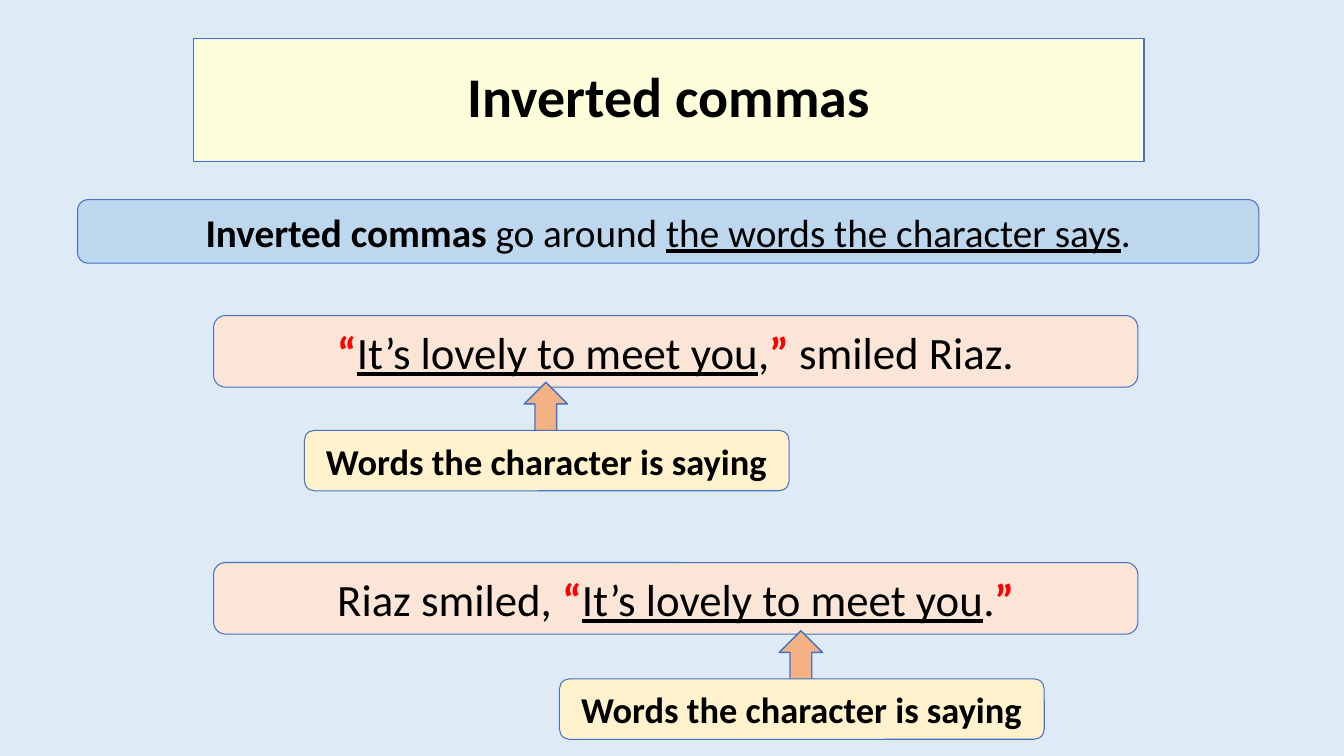
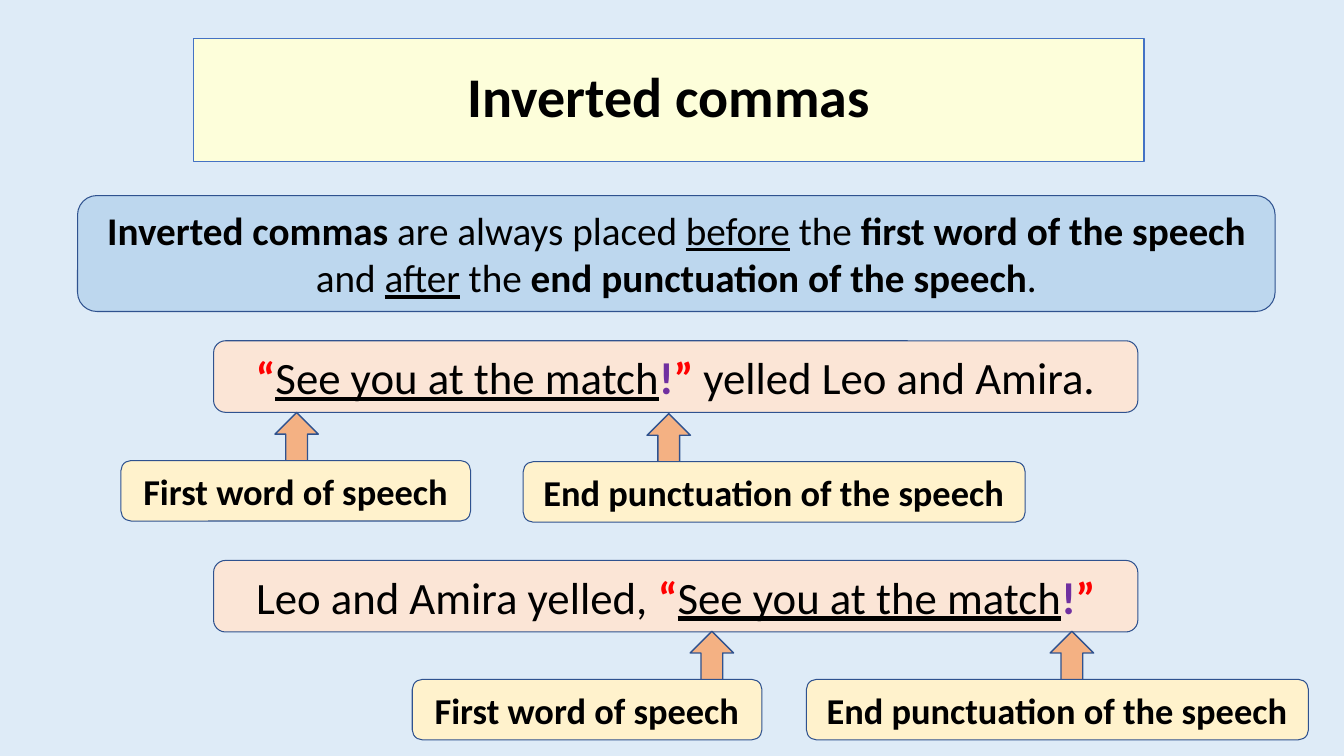
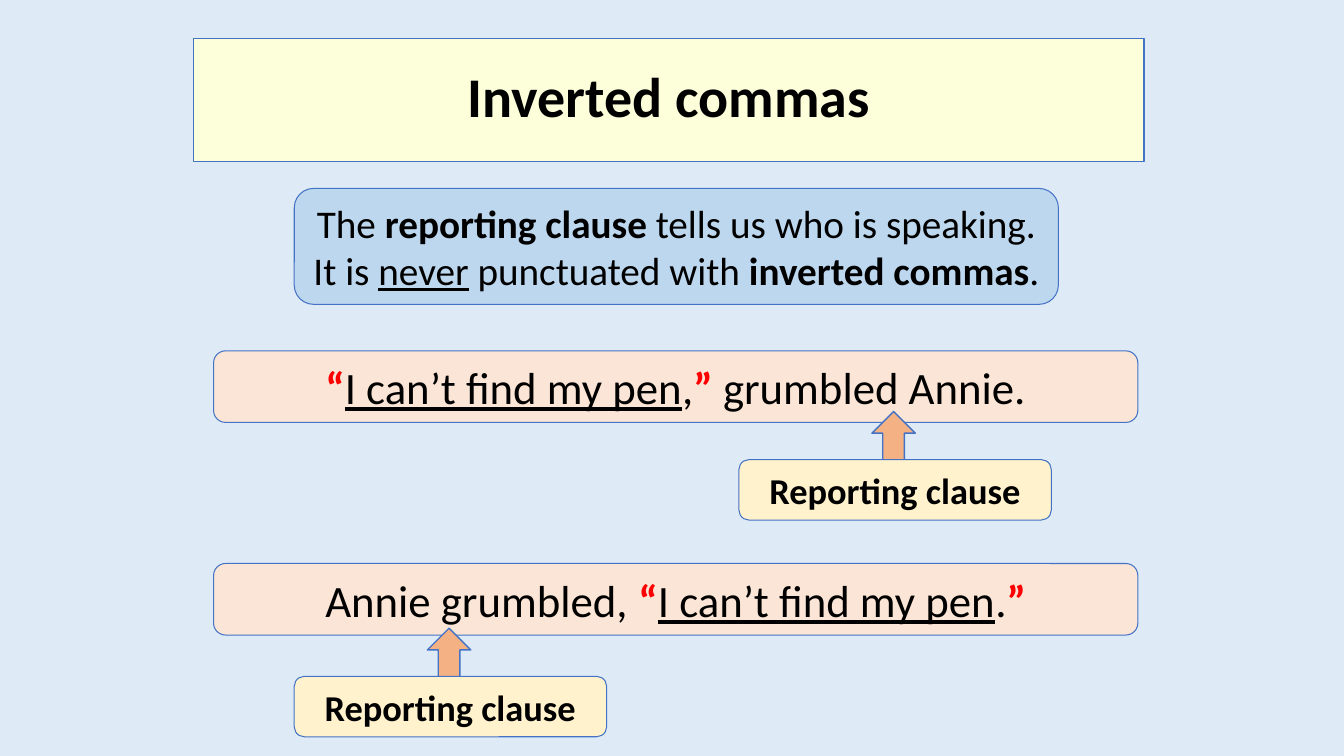
from pptx import Presentation
from pptx.dml.color import RGBColor
from pptx.enum.shapes import MSO_SHAPE
from pptx.enum.text import MSO_ANCHOR, PP_ALIGN
from pptx.util import Pt

RECT = MSO_SHAPE.RECTANGLE
ROUND = MSO_SHAPE.ROUNDED_RECTANGLE
ARROW = MSO_SHAPE.UP_ARROW
MIDDLE = MSO_ANCHOR.MIDDLE
CENTER = PP_ALIGN.CENTER

SKY = RGBColor(0xDE, 0xEB, 0xF7)
CREAM = RGBColor(0xFD, 0xFE, 0xDA)
BLUE = RGBColor(0xBD, 0xD7, 0xEE)
PEACH = RGBColor(0xFB, 0xE5, 0xD6)
ORANGE = RGBColor(0xF4, 0xB1, 0x83)
YELLOW = RGBColor(0xFF, 0xF2, 0xCC)
EDGE = RGBColor(0x44, 0x72, 0xC4)
NAVY = RGBColor(0x2F, 0x52, 0x8F)
BLACK = RGBColor(0, 0, 0)
RED = RGBColor(0xFF, 0, 0)
PURPLE = RGBColor(0x70, 0x30, 0xA0)

PLAIN = (BLACK, {})
BOLD = (BLACK, {"bold": True})
UNDER = (BLACK, {"underline": True})
MARK = (RED, {"bold": True})
STOP = (PURPLE, {"bold": True})

OPEN = ("“", MARK)
CLOSE = ("”", MARK)
MEET = ("It’s lovely to meet you", UNDER)
MATCH = ("See you at the match", UNDER)
PEN = ("I can’t find my pen", UNDER)
SHOUT = ("!", STOP)
COMMA = (",", PLAIN)
DOT = (".", PLAIN)

SAYING = ("Words the character is saying", 346.3)
FIRST = ("First word of speech", 249.8)
END = ("End punctuation of the speech", 358.6)
CLAUSE = ("Reporting clause", 223.2)

PAGES = [
    {
        "edge": EDGE,
        "rule": (55.4, 142.6, 843.8, 45.4),
        "words": [
            ("Inverted commas ", BOLD),
            ("go around ", PLAIN),
            ("the words the character says", UNDER),
            DOT,
        ],
        "lines": [
            (225.4, [OPEN, MEET, COMMA, CLOSE, (" smiled Riaz.", PLAIN)]),
            (401.8, [("Riaz smiled, ", PLAIN), OPEN, MEET, DOT, CLOSE]),
        ],
        "labels": [
            (SAYING, 217.4, 307.4, 374.4),
            (SAYING, 399.6, 484.9, 556.6),
        ],
    },
    {
        "edge": NAVY,
        "rule": (55.4, 139.7, 855.4, 82.8),
        "words": [
            ("Inverted commas ", BOLD),
            ("are always placed ", PLAIN),
            ("before", UNDER),
            (" the ", PLAIN),
            ("first word of the speech ", BOLD),
            ("and ", PLAIN),
            ("after", UNDER),
            (" the ", PLAIN),
            ("end punctuation of the speech", BOLD),
            DOT,
        ],
        "lines": [
            (243.4, [OPEN, MATCH, SHOUT, CLOSE, (" yelled Leo and Amira.", PLAIN)]),
            (400.3, [("Leo and Amira yelled, ", PLAIN), OPEN, MATCH, SHOUT, CLOSE]),
        ],
        "labels": [
            (FIRST, 86.4, 329, 196.4),
            (END, 373.7, 329.8, 462.2),
            (FIRST, 294.5, 485.3, 493),
            (END, 576, 485.3, 750.2),
        ],
    },
    {
        "edge": EDGE,
        "rule": (210.2, 134.6, 545.8, 82.8),
        "words": [
            ("The ", PLAIN),
            ("reporting clause ", BOLD),
            ("tells us who is speaking. It is ", PLAIN),
            ("never", UNDER),
            (" punctuated with ", PLAIN),
            ("inverted commas", BOLD),
            DOT,
        ],
        "lines": [
            (250.6, [OPEN, PEN, COMMA, CLOSE, (" grumbled Annie.", PLAIN)]),
            (402.5, [("Annie grumbled, ", PLAIN), OPEN, PEN, DOT, CLOSE]),
        ],
        "labels": [
            (CLAUSE, 527.8, 328.3, 622.8),
            (CLAUSE, 210.2, 483.1, 305.3),
        ],
    },
]


def draw(slide, kind, place, fill, edge, width=0.75):
    shape = slide.shapes.add_shape(kind, *[Pt(n) for n in place])
    shape.shadow.inherit = False
    shape.fill.solid()
    shape.fill.fore_color.rgb = fill
    shape.line.color.rgb = edge
    shape.line.width = Pt(width)
    return shape


def write(shape, runs, size):
    frame = shape.text_frame
    frame.word_wrap = True
    frame.vertical_anchor = MIDDLE
    para = frame.paragraphs[0]
    para.alignment = CENTER
    for text, (color, style) in runs:
        run = para.add_run()
        run.text = text
        run.font.color.rgb = color
        form = {"name": "Calibri", "size": Pt(size), **style}
        for key, value in form.items():
            setattr(run.font, key, value)
    return para


deck = Presentation()
deck.slide_width, deck.slide_height = Pt(960), Pt(540)
back = deck.slide_master.background.fill
back.solid()
back.fore_color.rgb = SKY

for page in PAGES:
    slide = deck.slides.add_slide(deck.slide_layouts[6])
    edge = page["edge"]

    title = draw(slide, RECT, (138.2, 27.4, 679, 87.8), CREAM, EDGE)
    write(title, [("Inverted commas", BOLD)], 40).line_spacing = 0.9

    rule = draw(slide, ROUND, page["rule"], BLUE, edge)
    write(rule, page["words"], 28)

    for top, runs in page["lines"]:
        line = draw(slide, ROUND, (152.6, top, 660.2, 51.1), PEACH, edge)
        write(line, runs, 32)

    for (text, width), left, top, tip in page["labels"]:
        draw(slide, ARROW, (tip, top - 34.4, 31, 35.3), ORANGE, edge, 1)
        label = draw(slide, ROUND, (left, top, width, 43.2), YELLOW, edge)
        write(label, [(text, BOLD)], 26)

deck.save("out.pptx")
